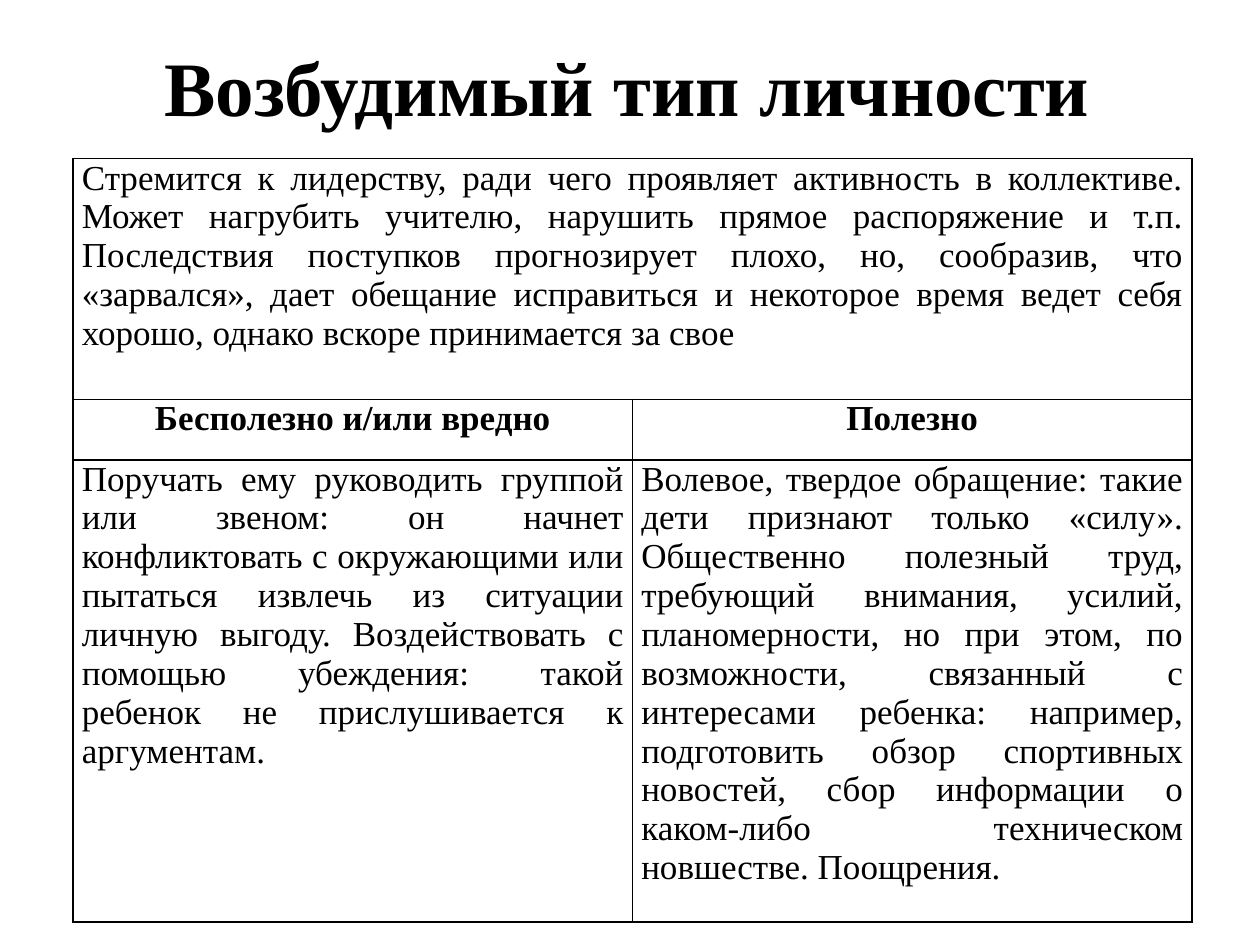
from lxml.etree import SubElement
from pptx import Presentation
from pptx.dml.color import RGBColor
from pptx.enum.text import MSO_ANCHOR, PP_ALIGN as AL
from pptx.oxml.ns import qn
from pptx.util import Inches, Pt

BLACK = RGBColor(0, 0, 0)
WHITE = RGBColor(255, 255, 255)
FONT = "Times New Roman"


def write(tf, text, size, align, bold=False):
    p = tf.paragraphs[0]
    p.alignment = align
    r = p.add_run()
    r.text = text
    r.font.name = FONT
    r.font.size = Pt(size)
    r.font.bold = bold
    r.font.color.rgb = BLACK
    return p


def add_borders(cell):
    tc_pr = cell._tc.get_or_add_tcPr()
    for i, side in enumerate(("a:lnL", "a:lnR", "a:lnT", "a:lnB")):
        ln = SubElement(tc_pr, qn(side), w=str(Pt(1)))
        tc_pr.insert(i, ln)  # lines come before the fill
        fill = SubElement(ln, qn("a:solidFill"))
        SubElement(fill, qn("a:srgbClr"), val=str(BLACK))


prs = Presentation()
prs.slide_width, prs.slide_height = Inches(10), Inches(7.5)
s = prs.slides.add_slide(prs.slide_layouts[6])

# Title
sp = s.shapes.add_textbox(Inches(0.67), Inches(0), Inches(8.62), Inches(1.45))
tf = sp.text_frame
tf.word_wrap = True
tf.vertical_anchor = MSO_ANCHOR.MIDDLE
p = write(tf, "Возбудимый тип личности", 44, AL.CENTER, True)
p.line_spacing = 0.9

# Table: description across the top, then two columns of advice
description = (
    "Стремится к лидерству, ради чего проявляет активность в коллективе. "
    "Может нагрубить учителю, нарушить прямое распоряжение и т.п. "
    "Последствия поступков прогнозирует плохо, но, сообразив, что «зарвался», "
    "дает обещание исправиться и некоторое время ведет себя хорошо, "
    "однако вскоре принимается за свое")
harmful = (
    "Поручать ему руководить группой или звеном: он начнет конфликтовать "
    "с окружающими или пытаться извлечь из ситуации личную выгоду. "
    "Воздействовать с помощью убеждения: такой ребенок не прислушивается "
    "к аргументам.")
useful = (
    "Волевое, твердое обращение: такие дети признают только «силу». "
    "Общественно полезный труд, требующий внимания, усилий, планомерности, "
    "но при этом, по возможности, связанный с интересами ребенка: например, "
    "подготовить обзор спортивных новостей, сбор информации о каком-либо "
    "техническом новшестве. Поощрения.")
rows = [
    (1.91, (description, "")),
    (0.48, ("Бесполезно и/или вредно", "Полезно")),
    (3.5, (harmful, useful)),
]
HEADER_ROW = 1

table = s.shapes.add_table(len(rows), 2, Inches(0.58), Inches(1.26),
                           Inches(8.88), Inches(5.89)).table
table.first_row = table.horz_banding = False
for col in table.columns:
    col.width = Inches(4.44)
table.cell(0, 0).merge(table.cell(0, 1))

for i, (height, texts) in enumerate(rows):
    table.rows[i].height = Inches(height)
    for j, text in enumerate(texts):
        cell = table.cell(i, j)
        cell.margin_left = cell.margin_right = Inches(0.07)
        cell.margin_top = cell.margin_bottom = 0
        cell.fill.solid()
        cell.fill.fore_color.rgb = WHITE
        add_borders(cell)
        if text:
            header = i == HEADER_ROW
            write(cell.text_frame, text, 20,
                  AL.CENTER if header else AL.JUSTIFY, header)

prs.save("out.pptx")
